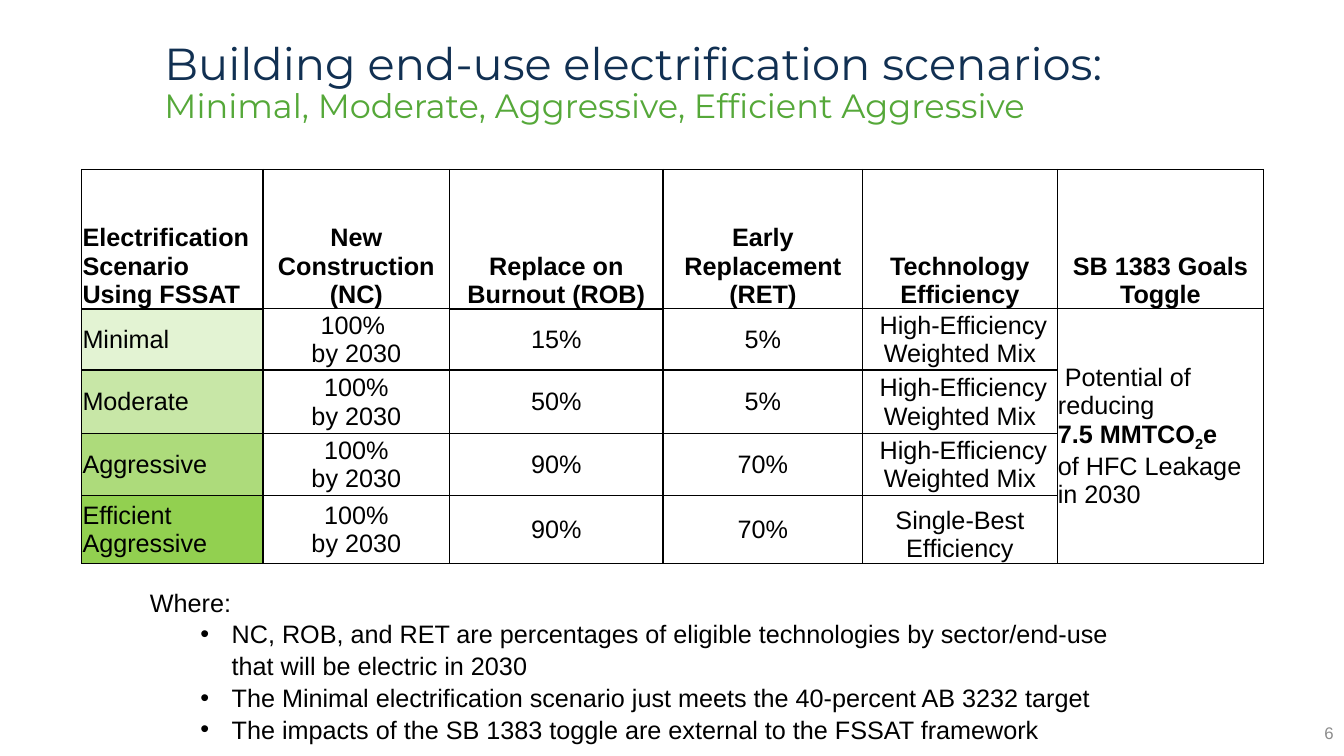
from lxml import etree
from pptx import Presentation
from pptx import util as u
from pptx.dml.color import RGBColor
from pptx.enum import text
from pptx.oxml.ns import qn

LEFT, CENTER, RIGHT = text.PP_ALIGN.LEFT, text.PP_ALIGN.CENTER, text.PP_ALIGN.RIGHT
MIDDLE, BOTTOM = text.MSO_ANCHOR.MIDDLE, text.MSO_ANCHOR.BOTTOM


class Theme:
    navy, green, black, grey = "113052", "55A839", "000000", "8C8C8C"
    scenario = "92D050"
    heading_font, body_font = "Montserrat", "Arial"
    title, subtitle, body, number = 32, 24, 18, 12


HEADINGS = ["Electrification Scenario Using FSSAT", "New Construction (NC)",
            "Replace on Burnout (ROB)", "Early Replacement (RET)",
            "Technology Efficiency", "SB 1383 Goals Toggle"]
WEIGHTED = " High-Efficiency\nWeighted Mix"
# name, tint in percent, new construction, burnout, early replacement, efficiency
SCENARIOS = [
    ("Minimal", 25, "100% \nby 2030", "15%", "5%", WEIGHTED),
    ("Moderate", 50, " 100% \nby 2030", "50%", "5%", WEIGHTED),
    ("Aggressive", 75, " 100% \nby 2030", "90%", "70%", WEIGHTED),
    ("Efficient Aggressive", 100, " 100% \nby 2030", "90%", "70%",
     "Single-Best Efficiency"),
]
TOGGLE = [(" Potential of reducing \v", {}), ("7.5 MMTCO", {"bold": True}),
          ("2", {"bold": True, "baseline": -25}), ("e \v", {"bold": True}),
          ("of HFC Leakage in 2030", {})]
NOTES = [
    "NC, ROB, and RET are percentages of eligible technologies by sector/end-use "
    "that will be electric in 2030",
    "The Minimal electrification scenario just meets the 40-percent AB 3232 target",
    "The impacts of the SB 1383 toggle are external to the FSSAT framework",
]


class ScenarioSlide:
    def __init__(self, deck, theme):
        self.theme = theme
        self.slide = deck.slides.add_slide(deck.slide_layouts[5])

    def style(self, font, size=None, color=None, name=None, bold=False):
        values = {"size": u.Pt(size or self.theme.body), "bold": bold,
                  "name": name or self.theme.body_font}
        for key, value in values.items():
            setattr(font, key, value)
        font.color.rgb = RGBColor.from_string(color or self.theme.black)

    def add_words(self, paragraph, pieces, align=LEFT):
        """Fill a paragraph from (words, format) pairs; \\v breaks the line."""
        paragraph.alignment = align
        for words, look in pieces:
            look = dict(look)
            baseline = look.pop("baseline", 0)
            for index, line in enumerate(words.split("\v")):
                if index:
                    paragraph.add_line_break()
                if line:
                    run = paragraph.add_run()
                    run.text = line
                    self.style(run.font, **look)
                    if baseline:
                        run._r.get_or_add_rPr().set("baseline", str(baseline * 1000))

    def place(self, shape, left, top, width, height):
        box = {"left": left, "top": top, "width": width, "height": height}
        for side, length in box.items():
            setattr(shape, side, u.Cm(length))

    def title(self, heading, subheading, *box):
        title = self.slide.shapes.title
        self.place(title, *box)
        frame = title.text_frame
        frame.auto_size = text.MSO_AUTO_SIZE.NONE
        frame.vertical_anchor = MIDDLE
        theme = self.theme
        self.add_words(frame.paragraphs[0], [
            (heading + "\v", {"size": theme.title, "color": theme.navy,
                              "name": theme.heading_font}),
            (subheading, {"size": theme.subtitle, "color": theme.green,
                          "name": theme.heading_font})])
        frame.paragraphs[0].line_spacing = 0.9

    def text_box(self, *box):
        frame = self.slide.shapes.add_textbox(*map(u.Cm, box)).text_frame
        frame.word_wrap = True
        return frame

    def notes(self, lead, items, *box):
        frame = self.text_box(*box)
        self.add_words(frame.paragraphs[0], [(lead, {})])
        for item in items:
            paragraph = frame.add_paragraph()
            paragraph.level = 1
            props = paragraph._p.get_or_add_pPr()
            props.set("marL", str(u.Cm(2.06)))
            props.set("indent", str(-u.Cm(0.79)))
            etree.SubElement(props, qn("a:buFont"), typeface=self.theme.body_font)
            etree.SubElement(props, qn("a:buChar"), char="•")
            self.add_words(paragraph, [(item, {})])
        for paragraph in frame.paragraphs:
            paragraph.line_spacing = 1.05

    def page_number(self, number, *box):
        frame = self.text_box(*box)
        frame.vertical_anchor = MIDDLE
        look = {"size": self.theme.number, "color": self.theme.grey}
        self.add_words(frame.paragraphs[0], [(number, look)], RIGHT)

    def cell(self, cell, paragraphs, align=CENTER, anchor=MIDDLE, tint=0, under=1):
        """Fill a cell; tint is the opacity of its colour in percent."""
        layout = {"margin_left": u.Cm(0.02), "margin_right": u.Cm(0.02),
                  "margin_top": u.Cm(0.02), "margin_bottom": 0,
                  "vertical_anchor": anchor}
        for key, value in layout.items():
            setattr(cell, key, value)
        frame = cell.text_frame
        for index, pieces in enumerate(paragraphs):
            self.add_words(frame.add_paragraph() if index else frame.paragraphs[0],
                           pieces, align)
        self.borders(cell, under)
        if tint:
            cell.fill.solid()
            cell.fill.fore_color.rgb = RGBColor.from_string(self.theme.scenario)
            if tint < 100:
                color = cell._tc.tcPr.find(qn("a:solidFill")).find(qn("a:srgbClr"))
                etree.SubElement(color, qn("a:alpha"), val=str(tint * 1000))
        else:
            cell.fill.background()

    def borders(self, cell, under):
        props = cell._tc.get_or_add_tcPr()
        for side, points in {"L": 1, "R": 1, "T": 1, "B": under}.items():
            line = etree.SubElement(props, qn("a:ln" + side), w=str(u.Pt(points)))
            fill = etree.SubElement(line, qn("a:solidFill"))
            etree.SubElement(fill, qn("a:srgbClr"), val=self.theme.black)

    def scenario_table(self, left, top, widths, heights):
        table = self.slide.shapes.add_table(
            len(heights), len(widths), u.Cm(left), u.Cm(top),
            u.Cm(sum(widths)), u.Cm(sum(heights))).table
        table.first_row = table.horz_banding = False
        for column, width in zip(table.columns, widths):
            column.width = u.Cm(width)
        for row, height in zip(table.rows, heights):
            row.height = u.Cm(height)
        for c, heading in enumerate(HEADINGS):
            self.cell(table.cell(0, c), [[(heading, {"bold": True})]],
                      CENTER if c else LEFT, BOTTOM, under=2 if c in (0, 2) else 1)
        toggle = len(widths) - 1
        table.cell(1, toggle).merge(table.cell(len(SCENARIOS), toggle))
        for r, (name, tint, *values) in enumerate(SCENARIOS, 1):
            self.cell(table.cell(r, 0), [[(name, {})]], LEFT, tint=tint)
            for c, value in enumerate(values, 1):
                anchor = BOTTOM if value.startswith("Single") else MIDDLE
                self.cell(table.cell(r, c),
                          [[(line, {})] for line in value.split("\n")], anchor=anchor)
            self.cell(table.cell(r, toggle), [TOGGLE] if r == 1 else [], LEFT)


def main():
    deck = Presentation()
    deck.slide_width, deck.slide_height = u.Cm(33.87), u.Cm(19.05)
    page = ScenarioSlide(deck, Theme)
    page.page_number("6", 26.24, 17.96, 7.62, 1.02)
    page.title("Building end-use electrification scenarios:",
               "Minimal, Moderate, Aggressive, Efficient Aggressive",
               3.89, 0.66, 28.4, 2.9)
    page.notes("Where:", NOTES, 3.53, 14.63, 25.22, 4.11)
    page.scenario_table(2.06, 4.27, [4.57, 4.7, 5.38, 5.03, 4.9, 5.21],
                        [3.51, 1.54, 1.6, 1.57, 1.7])
    deck.save("out.pptx")


if __name__ == "__main__":
    main()
